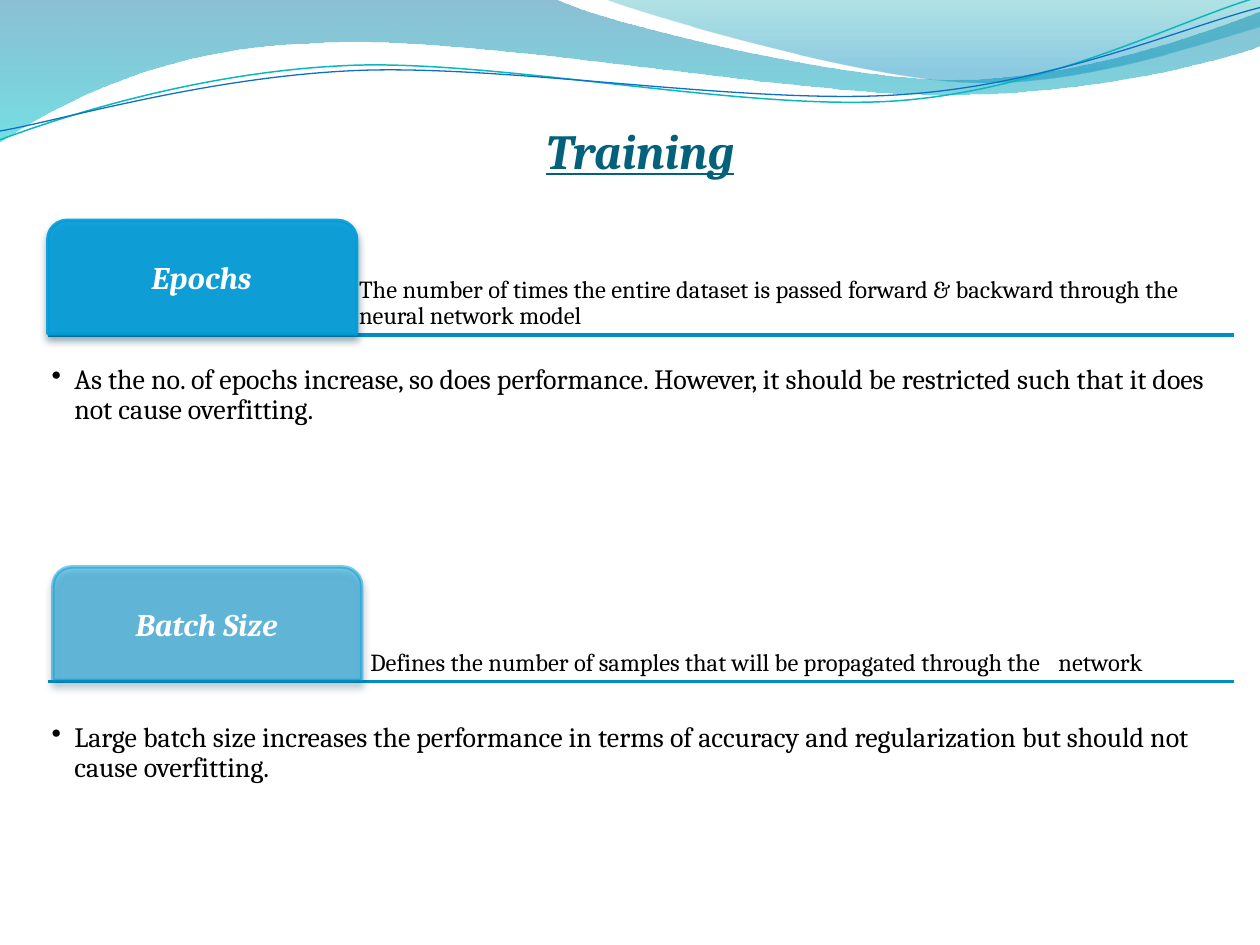
from lxml import etree
from pptx import Presentation
from pptx.dml.color import RGBColor
from pptx.enum.shapes import MSO_CONNECTOR, MSO_SHAPE
from pptx.enum.text import MSO_ANCHOR, PP_ALIGN
from pptx.oxml.ns import qn
from pptx.util import Pt

PX = 9144  # EMU per px, 100 px to the inch
LINE = MSO_CONNECTOR.STRAIGHT
TAB = MSO_SHAPE.ROUND_2_SAME_RECTANGLE
TOP, MIDDLE, BOTTOM = MSO_ANCHOR.TOP, MSO_ANCHOR.MIDDLE, MSO_ANCHOR.BOTTOM
LEFT, CENTER = PP_ALIGN.LEFT, PP_ALIGN.CENTER

WHITE = RGBColor(0xFF, 0xFF, 0xFF)
BLACK = RGBColor(0x00, 0x00, 0x00)
TEAL = RGBColor(0x04, 0x61, 0x7B)
SKY = RGBColor(0x00, 0x9D, 0xD9)
RULE = RGBColor(0x00, 0x8E, 0xC5)
AQUA = RGBColor(0x0A, 0xB8, 0xBF)
BLUE = RGBColor(0x0F, 0x6F, 0xC6)
DEEP = RGBColor(0x00, 0x74, 0xA1)
CYAN = RGBColor(0x00, 0xC6, 0xCF)
GREEN = RGBColor(0x00, 0xA1, 0xA9)
AZURE = RGBColor(0x00, 0x8B, 0xBF)
SHADE = RGBColor(0x00, 0x37, 0x4C)

HEAD = {"size": Pt(28), "bold": True, "italic": True, "underline": True}
LABEL = {"size": Pt(18), "bold": True, "italic": True}
BRIEF = {"size": Pt(14)}
POINT = {"size": Pt(16)}

# Each wave is a start point followed by curves (six numbers) or lines (two).
BANDS = [
    ([(0, 0), (440, -1), (476, 17, 664, 63, 758, 63), (853, 63, 958, 26, 1000, 9),
      (1001, 36), (983, 44, 870, 76, 746, 75), (622, 75, 382, 28, 257, 34),
      (129, 36, 46, 83, -1, 113)],
     [(0, DEEP, 45), (1, CYAN, 55)]),
    ([(479, -1), (509, 11, 682, 62, 769, 65), (856, 69, 961, 32, 1000, 21), (1000, 0)],
     [(0, GREEN, 30), (0.8, AZURE, 45)]),
]
STRANDS = [
    ([(0, 111), (48, 93, 158, 57, 277, 52), (395, 47, 593, 89, 713, 80),
      (833, 71, 938, 15, 998, -2)], AQUA, 0.85),
    ([(0, 104), (47, 96, 164, 61, 283, 56), (403, 51, 597, 84, 717, 75),
      (836, 67, 941, 21, 1000, 6)], BLUE, 0.75),
]

# Box, tab shift, tab opacity, label, brief, brief inset, point, point inset
TOPICS = [
    ((38, 175, 941, 91), 0, 90, "Epochs",
     "The number of times the entire dataset is passed forward & backward "
     "through the neural network model", 3,
     "As the no. of epochs increase, so does performance. However, it should be "
     "restricted such that it does not cause overfitting.", 25),
    ((38, 450, 941, 91), 4, 50, "Batch Size",
     "Defines the number of samples that will be propagated through the\tnetwork", 12,
     "Large batch size increases the performance in terms of accuracy and "
     "regularization but should not cause overfitting.", 34),
]


def scale(*nums):
    return [round(n * PX) for n in nums]


def fade(color, alpha):
    """Give a solid colour element an opacity in percent."""
    etree.SubElement(color, qn("a:alpha"), val=str(alpha * 1000))


def add_wave(slide, wave, close):
    """Build a freeform, then join each three points of a curve into one Bezier."""
    start, *parts = wave
    form = slide.shapes.build_freeform(*scale(*start))
    for part in parts:
        nums = scale(*part)
        form.add_line_segments(list(zip(nums[::2], nums[1::2])), close=False)
    if close:
        form.add_line_segments([], close=True)
    shape = form.convert_to_shape()
    shape.shadow.inherit = False
    legs = iter(list(shape._element.spPr.iter(qn("a:lnTo"))))
    for part in parts:
        first = next(legs)
        if len(part) == 6:
            curve = etree.Element(qn("a:cubicBezTo"))
            first.addprevious(curve)
            for leg in (first, next(legs), next(legs)):
                curve.append(leg[0])
                leg.getparent().remove(leg)
    return shape


def add_waves(slide):
    for wave, stops in BANDS:
        shape = add_wave(slide, wave, True)
        shape.line.fill.background()
        shape.fill.gradient()
        shape.fill.gradient_angle = 270
        for stop, (pos, color, alpha) in zip(shape.fill.gradient_stops, stops):
            stop.position = pos
            stop.color.rgb = color
        marks = list(shape._element.spPr.iter(qn("a:srgbClr")))
        for mark, (pos, color, alpha) in zip(marks, stops):
            fade(mark, alpha)
    for wave, color, width in STRANDS:
        shape = add_wave(slide, wave, False)
        shape.fill.background()
        shape.line.color.rgb = color
        shape.line.width = Pt(width)


def add_text(slide, box, text, style, color, anchor=TOP, align=LEFT,
             inset=(3, 3, 3, 3), space=0.9):
    frame = slide.shapes.add_textbox(*scale(*box)).text_frame
    frame.word_wrap = True
    frame.vertical_anchor = anchor
    for side, gap in zip(("left", "top", "right", "bottom"), scale(*inset)):
        setattr(frame, "margin_" + side, gap)
    para = frame.paragraphs[0]
    para.alignment = align
    para.line_spacing = space
    run = para.add_run()
    run.text = text
    run.font.name = "Cambria"
    run.font.color.rgb = color
    for key, value in style.items():
        setattr(run.font, key, value)
    return para


def add_title(slide, box):
    add_text(slide, box, "Training", HEAD, TEAL, BOTTOM, CENTER, (0, 5, 0, 0), 1.0)


def add_tab(slide, box, alpha, label):
    tab = slide.shapes.add_shape(TAB, *scale(*box))
    tab.adjustments[0], tab.adjustments[1] = 0.167, 0
    tab.fill.solid()
    tab.fill.fore_color.rgb = SKY
    tab.line.color.rgb = SKY
    tab.line.width = Pt(2)
    props = tab._element.spPr
    for color in list(props.iter(qn("a:srgbClr"))):
        fade(color, alpha)
    effects = etree.SubElement(props, qn("a:effectLst"))
    shadow = etree.SubElement(effects, qn("a:outerShdw"), blurRad=str(Pt(4.5)),
                              dist=str(Pt(3)), dir="5400000", rotWithShape="0")
    fade(etree.SubElement(shadow, qn("a:srgbClr"), val=str(SHADE)), 48)
    x, y, w, h = box
    add_text(slide, (x + 4, y + 4, w - 9, h - 4), label, LABEL, WHITE,
             MIDDLE, CENTER, (4, 4, 4, 4))


def add_topic(slide, box, shift, alpha, label, brief, inset, point, drop):
    """Tab and brief on a rule, with a bullet point below."""
    x, y, w, h = box
    rule = slide.shapes.add_connector(LINE, *scale(x, y + h, x + w, y + h))
    rule.line.color.rgb = RULE
    rule.line.width = Pt(2)
    etree.SubElement(rule._element.spPr, qn("a:effectLst"))

    para = add_text(slide, (x + 244, y, w - 244, 90), brief, BRIEF, BLACK,
                    BOTTOM, inset=(inset, 3, 3, 3))
    if "\t" in brief:
        tabs = etree.SubElement(para._p.get_or_add_pPr(), qn("a:tabLst"))
        etree.SubElement(tabs, qn("a:tab"), pos=str(546 * PX), algn="l")

    add_tab(slide, (x + shift, y, 245, 90), alpha, label)

    para = add_text(slide, (x, y + 90, w + 1, 181), point, POINT, BLACK,
                    inset=(3, drop, 3, 3))
    props = para._p.get_or_add_pPr()
    props.set("marL", str(18 * PX))
    props.set("indent", str(-18 * PX))
    etree.SubElement(props, qn("a:buChar"), char="•")


def main():
    deck = Presentation()
    deck.slide_width, deck.slide_height = scale(1000, 750)
    slide = deck.slides.add_slide(deck.slide_layouts[6])
    add_waves(slide)
    add_title(slide, (58, 17, 900, 125))
    for topic in TOPICS:
        add_topic(slide, *topic)
    deck.save("out.pptx")


if __name__ == "__main__":
    main()
